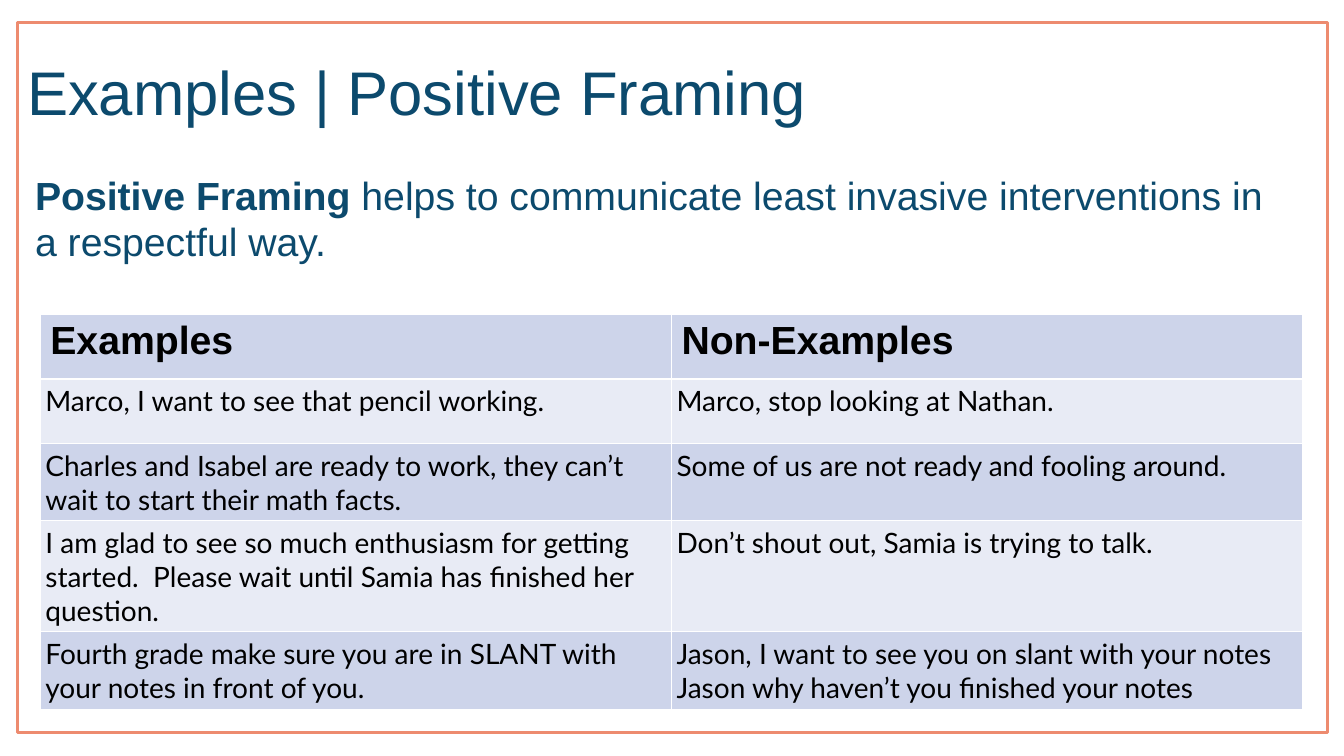
from lxml.etree import SubElement
from pptx import Presentation
from pptx.dml.color import RGBColor
from pptx.enum.shapes import MSO_SHAPE
from pptx.enum.text import MSO_ANCHOR
from pptx.oxml.ns import qn
from pptx.util import Inches, Pt

TITLE = "Examples | Positive Framing"
INTRO = [
    ("Positive Framing ", True),
    ("helps to communicate least invasive interventions in a respectful way.", False),
]
ROWS = [
    (["Examples"], ["Non-Examples"]),
    (["Marco, I want to see that pencil working."], ["Marco, stop looking at Nathan."]),
    (["Charles and Isabel are ready to work, they can’t wait to start their math facts."],
     ["Some of us are not ready and fooling around."]),
    (["I am glad to see so much enthusiasm for getting started.  "
      "Please wait until Samia has finished her question."],
     ["Don’t shout out, Samia is trying to talk."]),
    (["Fourth grade make sure you are in SLANT with your notes in front of you."],
     ["Jason, I want to see you on slant with your notes",
      "Jason why haven’t you finished your notes"]),
]
COLORS = {
    "frame": "ED8B6F", "heading": "0C4A6D", "text": "000000",
    "dark band": "CDD4EA", "light band": "E8EBF5", "border": "FFFFFF",
}
WIDTH, HEIGHT = 13.33, 7.5
LEFT, TOP = 0.17, 0.22
FRAME_WIDTH, FRAME_HEIGHT = 13, 7.05
TITLE_WIDTH, TITLE_HEIGHT = 10.77, 1.45
BODY_WIDTH = 12.76
TABLE_LEFT, TABLE_TOP = 0.4, 3.12
COLUMN_WIDTH = 6.26
ROW_HEIGHTS = [0.64, 0.64, 0.64, 0.46, 0.64]


def color(name):
    return RGBColor.from_string(COLORS[name])


def add_span(para, text, size, font, color_name, bold=False):
    span = para.add_run()
    span.text = text
    span.font.size = Pt(size)
    span.font.name = font
    span.font.bold = bold
    span.font.color.rgb = color(color_name)


def add_text_box(page, left, top, width, height):
    frame = page.shapes.add_textbox(*map(Inches, (left, top, width, height))).text_frame
    frame.word_wrap = True
    return frame


def add_borders(cell):
    properties = cell._tc.get_or_add_tcPr()
    for side in ("a:lnL", "a:lnR", "a:lnT", "a:lnB"):
        line = SubElement(properties, qn(side), w=str(Pt(1)))
        SubElement(SubElement(line, qn("a:solidFill")), qn("a:srgbClr"), val=COLORS["border"])


def fill_cell(cell, lines, row):
    header = row == 0
    margin = Inches(0.1 if header else 0.05)
    cell.margin_left = cell.margin_right = margin
    cell.margin_top = cell.margin_bottom = Inches(0.05)
    add_borders(cell)
    cell.fill.solid()
    cell.fill.fore_color.rgb = color("light band" if row % 2 else "dark band")
    frame = cell.text_frame
    for index, text in enumerate(lines):
        para = frame.add_paragraph() if index else frame.paragraphs[0]
        add_span(para, text, 28 if header else 20, "Arial" if header else "Lato", "text", header)


def add_examples_table(page):
    table = page.shapes.add_table(
        len(ROWS), 2, Inches(TABLE_LEFT), Inches(TABLE_TOP),
        Inches(2 * COLUMN_WIDTH), Inches(sum(ROW_HEIGHTS))).table
    for column in table.columns:
        column.width = Inches(COLUMN_WIDTH)
    for row, (height, entries) in enumerate(zip(ROW_HEIGHTS, ROWS)):
        table.rows[row].height = Inches(height)
        for column, lines in enumerate(entries):
            fill_cell(table.cell(row, column), lines, row)


def main():
    deck = Presentation()
    deck.slide_width, deck.slide_height = Inches(WIDTH), Inches(HEIGHT)
    page = deck.slides.add_slide(deck.slide_layouts[6])

    border = page.shapes.add_shape(
        MSO_SHAPE.RECTANGLE, *map(Inches, (LEFT, TOP, FRAME_WIDTH, FRAME_HEIGHT)))
    border.shadow.inherit = False
    border.fill.background()
    border.line.color.rgb = color("frame")
    border.line.width = Pt(2)

    title = add_text_box(page, LEFT, TOP, TITLE_WIDTH, TITLE_HEIGHT)
    title.vertical_anchor = MSO_ANCHOR.MIDDLE
    title.paragraphs[0].line_spacing = 0.9
    add_span(title.paragraphs[0], TITLE, 44, "Arial", "heading")

    body = add_text_box(page, LEFT, TOP + TITLE_HEIGHT, BODY_WIDTH, FRAME_HEIGHT - TITLE_HEIGHT)
    para = body.paragraphs[0]
    para.line_spacing = 0.98
    para.space_before = Pt(6)
    para._p.get_or_add_pPr().set("marL", str(Inches(0.08)))
    for text, bold in INTRO:
        add_span(para, text, 28, "Arial", "heading", bold)

    add_examples_table(page)
    deck.save("out.pptx")


if __name__ == "__main__":
    main()
